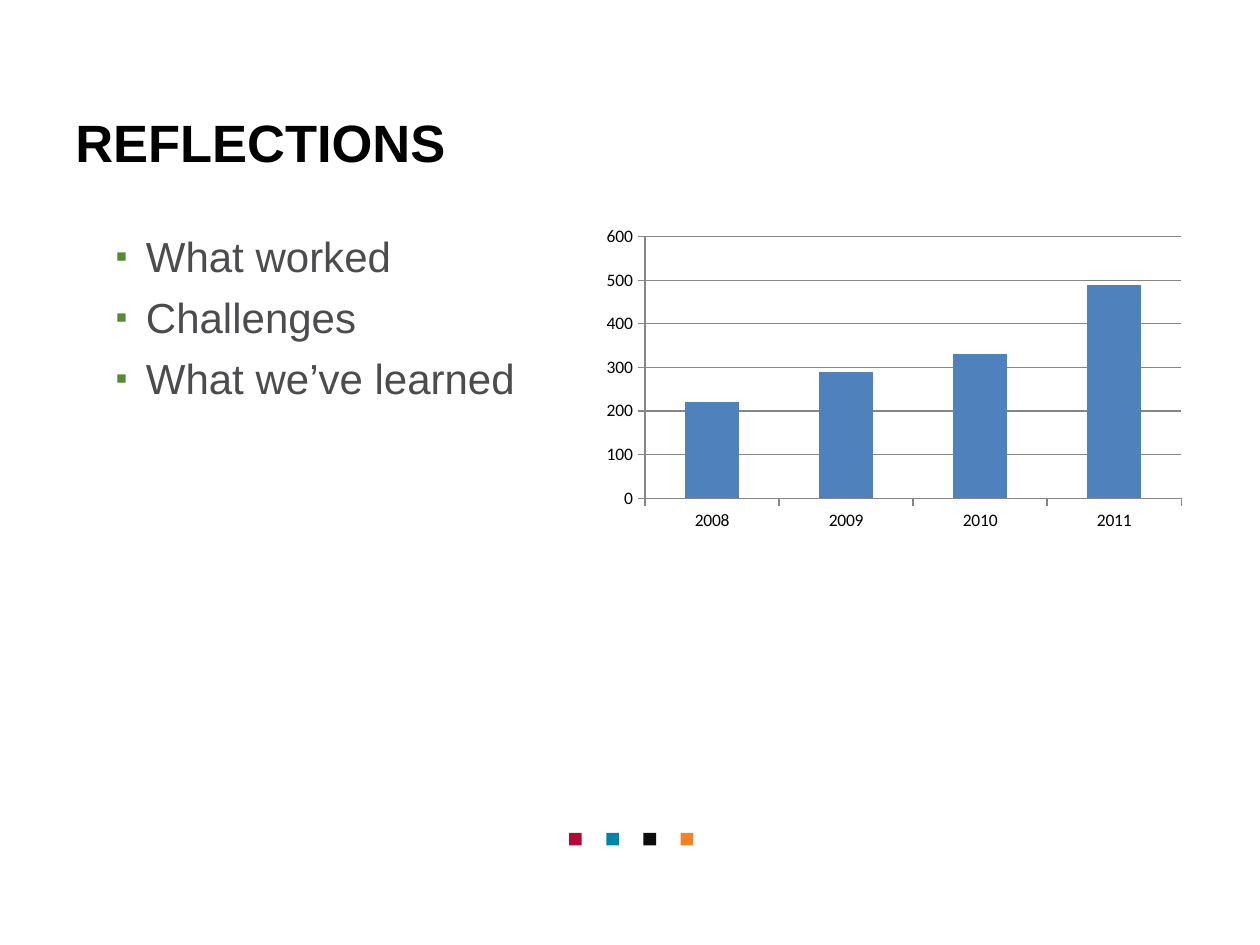
"""Build the Reflections slide: a bulleted list beside a column chart."""
import pptx
import pptx.chart.data
import pptx.dml.color
import pptx.enum.chart
import pptx.enum.shapes
import pptx.enum.text
import pptx.oxml
import pptx.oxml.ns
import pptx.util

RGBColor = pptx.dml.color.RGBColor
Inches, Pt = pptx.util.Inches, pptx.util.Pt

WIDTH, HEIGHT = 10, 7.5
BLACK = RGBColor(0x00, 0x00, 0x00)
GREY = RGBColor(0x4C, 0x4C, 0x4F)
AXIS_GREY = RGBColor(0x86, 0x86, 0x86)
BLUE = RGBColor(0x4F, 0x81, 0xBD)
GREEN = RGBColor(0x55, 0x8B, 0x34)
DOT_COLOURS = (
    RGBColor(0xB3, 0x08, 0x38),
    RGBColor(0x00, 0x84, 0xA9),
    RGBColor(0x0D, 0x0D, 0x0D),
    RGBColor(0xF5, 0x80, 0x25),
)

MARGIN = WIDTH * 0.05
CONTENT_TOP = 1.75
DOT_SIZE, DOT_PITCH = 0.1, 0.295
POINTS = ("What worked", "Challenges", "What we’ve learned")
YEARS = ("2008", "2009", "2010", "2011")
VALUES = (220, 290, 330, 490)


def place(left, top, width, height):
    return [Inches(length) for length in (left, top, width, height)]


def style(font, size, colour, name="Arial", bold=False):
    font.name, font.size, font.bold = name, Pt(size), bold
    font.color.rgb = colour


def add_dots(slide):
    left = (WIDTH - DOT_SIZE - DOT_PITCH * (len(DOT_COLOURS) - 1)) / 2 + 0.01
    for column, colour in enumerate(DOT_COLOURS):
        dot = slide.shapes.add_shape(
            pptx.enum.shapes.MSO_SHAPE.RECTANGLE,
            *place(left + column * DOT_PITCH, 6.61, DOT_SIZE, DOT_SIZE))
        dot.shadow.inherit = False
        dot.fill.solid()
        dot.fill.fore_color.rgb = colour
        dot.line.fill.background()


def add_title(slide, wording):
    frame = slide.shapes.add_textbox(*place(MARGIN, 0.5, 9.17, 1.25)).text_frame
    frame.word_wrap = True
    frame.vertical_anchor = pptx.enum.text.MSO_ANCHOR.MIDDLE
    frame.text = wording
    style(frame.paragraphs[0].runs[0].font, 30, BLACK, bold=True)


def add_bullet(paragraph):
    properties = paragraph._p.get_or_add_pPr()
    properties.set("marL", str(Inches(0.56)))
    properties.set("indent", str(Inches(-0.24)))
    namespace = pptx.oxml.ns.nsdecls("a")
    for element in (
        f'<a:buClr {namespace}><a:srgbClr val="{GREEN}"/></a:buClr>',
        f'<a:buSzPct {namespace} val="80000"/>',
        f'<a:buFont {namespace} typeface="Arial"/>',
        f'<a:buChar {namespace} char="▪"/>',
    ):
        properties.append(pptx.oxml.parse_xml(element))


def add_points(slide, points):
    frame = slide.shapes.add_textbox(*place(MARGIN, CONTENT_TOP, 4.42, 4.95)).text_frame
    frame.word_wrap = True
    frame.margin_top = Inches(0.08)
    frame.text = "\n".join(points)
    for row, paragraph in enumerate(frame.paragraphs):
        add_bullet(paragraph)
        if row:
            paragraph.space_before = Pt(6)
        style(paragraph.runs[0].font, 24, GREY)


def add_column_chart(slide):
    data = pptx.chart.data.CategoryChartData()
    data.categories = YEARS
    data.add_series("Series 1", VALUES)
    chart = slide.shapes.add_chart(
        pptx.enum.chart.XL_CHART_TYPE.COLUMN_CLUSTERED,
        *place(4.72, CONTENT_TOP, 4.75, 2.51), data).chart
    chart.has_legend = chart.has_title = False
    style(chart.font, 10, BLACK, name="Calibri")

    columns = chart.plots[0]
    columns.gap_width = 150
    columns.vary_by_categories = False
    fill = columns.series[0].format.fill
    fill.solid()
    fill.fore_color.rgb = BLUE

    scale = chart.value_axis
    scale.minimum_scale, scale.maximum_scale, scale.major_unit = 0, 600, 100
    scale.has_major_gridlines = True
    for axis in (chart.category_axis, scale):
        axis.major_tick_mark = pptx.enum.chart.XL_TICK_MARK.OUTSIDE
        axis.minor_tick_mark = pptx.enum.chart.XL_TICK_MARK.NONE
    for ruled in (chart.category_axis, scale, scale.major_gridlines):
        ruled.format.line.color.rgb = AXIS_GREY
        ruled.format.line.width = Pt(0.75)


def main():
    deck = pptx.Presentation()
    deck.slide_width, deck.slide_height = Inches(WIDTH), Inches(HEIGHT)
    slide = deck.slides.add_slide(deck.slide_layouts[6])
    add_dots(slide)
    add_title(slide, "REFLECTIONS")
    add_points(slide, POINTS)
    add_column_chart(slide)
    deck.save("out.pptx")


if __name__ == "__main__":
    main()
